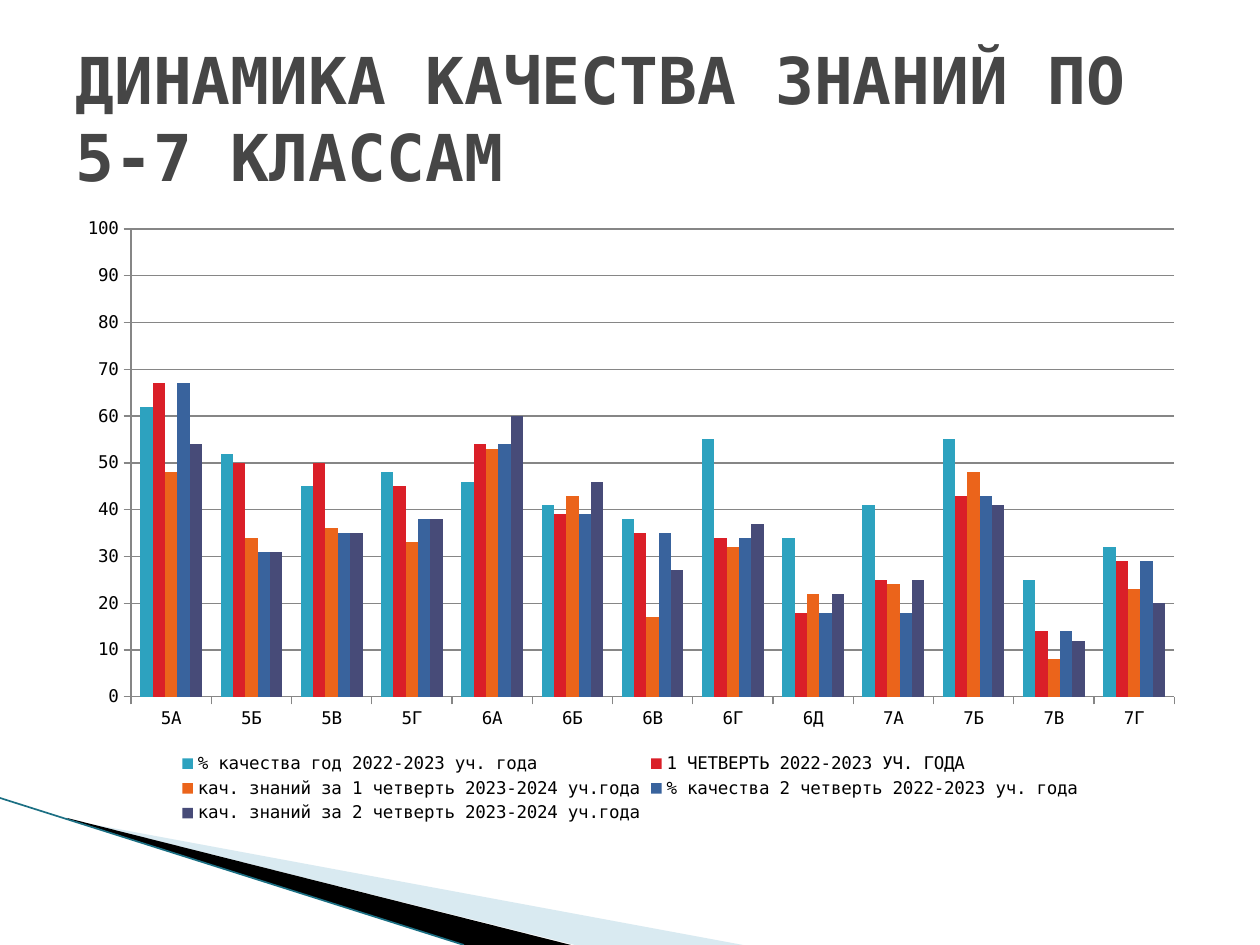
from dataclasses import dataclass

import lxml.etree
import pptx
import pptx.chart.data
import pptx.dml.color
import pptx.enum.chart
import pptx.enum.shapes
import pptx.enum.text
import pptx.oxml
import pptx.oxml.ns
import pptx.util

EMU_PER_PIXEL = 914400 / 126
FONT = "DejaVu Sans Mono"
GREY = "868686"


@dataclass(frozen=True)
class Wedge:
    """A filled polygon of the corner decoration."""
    points: tuple[tuple[int, int], ...]
    color: str
    opacity: int = 100


@dataclass(frozen=True)
class Series:
    """One coloured row of columns."""
    name: str
    color: str
    values: tuple[int, ...]


WEDGES = (
    Wedge(((69, 820), (743, 945), (575, 945), (69, 819)), "A0CBDC", 40),
    Wedge(((67, 818), (571, 945), (464, 945), (68, 819)), "000000"),
)
CLASSES = ("5А", "5Б", "5В", "5Г", "6А", "6Б", "6В", "6Г", "6Д", "7А", "7Б", "7В", "7Г")
SERIES = (
    Series("% качества год 2022-2023 уч. года", "2DA2BF",
           (62, 52, 45, 48, 46, 41, 38, 55, 34, 41, 55, 25, 32)),
    Series("1 ЧЕТВЕРТЬ 2022-2023 УЧ. ГОДА", "DA1F28",
           (67, 50, 50, 45, 54, 39, 35, 34, 18, 25, 43, 14, 29)),
    Series("кач. знаний за 1 четверть 2023-2024 уч.года", "EB641B",
           (48, 34, 36, 33, 53, 43, 17, 32, 22, 24, 48, 8, 23)),
    Series("% качества 2 четверть 2022-2023 уч. года", "39639D",
           (67, 31, 35, 38, 54, 39, 35, 34, 18, 18, 43, 14, 29)),
    Series("кач. знаний за 2 четверть 2023-2024 уч.года", "474B78",
           (54, 31, 35, 38, 60, 46, 27, 37, 22, 25, 41, 12, 20)),
)


def px(length: int) -> int:
    """Turn pixels into EMU."""
    return round(length * EMU_PER_PIXEL)


def rgb(color: str) -> pptx.dml.color.RGBColor:
    """Turn a hex string into a colour."""
    return pptx.dml.color.RGBColor.from_string(color)


def add_wedge(page, wedge: Wedge) -> None:
    """Draw one polygon of the decoration."""
    builder = page.shapes.build_freeform(*wedge.points[0], scale=EMU_PER_PIXEL)
    builder.add_line_segments(wedge.points[1:])
    shape = builder.convert_to_shape()
    shape.shadow.inherit = False
    shape.line.fill.background()
    shape.fill.solid()
    shape.fill.fore_color.rgb = rgb(wedge.color)
    if wedge.opacity < 100:
        color = shape.fill._xPr.find(".//" + pptx.oxml.ns.qn("a:srgbClr"))
        alpha = lxml.etree.SubElement(color, pptx.oxml.ns.qn("a:alpha"))
        alpha.set("val", str(wedge.opacity * 1000))


def add_edge(page) -> None:
    """Draw the thin line along the decoration."""
    edge = page.shapes.add_connector(
        pptx.enum.shapes.MSO_CONNECTOR.STRAIGHT, px(0), px(798), px(464), px(945))
    edge.line.color.rgb = rgb("1B6F83")
    edge.line.width = pptx.util.Pt(0.95)
    lxml.etree.SubElement(edge._element.spPr, pptx.oxml.ns.qn("a:effectLst"))


def add_title(page, text: str) -> None:
    """Write the slide title."""
    box = page.shapes.add_textbox(px(63), px(38), px(1134), px(158))
    frame = box.text_frame
    frame.word_wrap = True
    frame.vertical_anchor = pptx.enum.text.MSO_ANCHOR.MIDDLE
    para = frame.paragraphs[0]
    para.text = text
    para.font.name = FONT
    para.font.size = pptx.util.Pt(36.9)
    para.font.bold = True
    para.font.color.rgb = rgb("464646")


def place_plot(chart, **layout: float) -> None:
    """Fix the inner plot area as fractions of the chart."""
    plot_area = chart._chartSpace.chart.plotArea
    for old in plot_area.findall(pptx.oxml.ns.qn("c:layout")):
        plot_area.remove(old)
    sizes = "".join(f'<c:{key} val="{value}"/>' for key, value in layout.items())
    plot_area.insert(0, pptx.oxml.parse_xml(
        f'<c:layout {pptx.oxml.ns.nsdecls("c")}><c:manualLayout>'
        '<c:layoutTarget val="inner"/><c:xMode val="edge"/><c:yMode val="edge"/>'
        f'{sizes}</c:manualLayout></c:layout>'))


def add_quality_chart(page) -> None:
    """Draw the clustered columns of quality by class."""
    data = pptx.chart.data.CategoryChartData(number_format="General")
    data.categories = CLASSES
    for series in SERIES:
        data.add_series(series.name, series.values)
    chart = page.shapes.add_chart(
        pptx.enum.chart.XL_CHART_TYPE.COLUMN_CLUSTERED,
        px(63), px(204), px(1134), px(624), data).chart
    chart.has_title = False
    chart.font.name = FONT
    chart.font.size = pptx.util.Pt(10)
    chart.font.color.rgb = rgb("000000")
    chart.has_legend = True
    chart.legend.position = pptx.enum.chart.XL_LEGEND_POSITION.BOTTOM
    chart.legend.include_in_layout = False

    plot = chart.plots[0]
    plot.vary_by_categories = False
    plot.gap_width = 150
    plot.overlap = 0
    for drawn, series in zip(plot.series, SERIES):
        drawn.format.fill.solid()
        drawn.format.fill.fore_color.rgb = rgb(series.color)

    scale = chart.value_axis
    scale.minimum_scale, scale.maximum_scale, scale.major_unit = 0, 100, 10
    scale.has_major_gridlines = True
    for axis in (chart.category_axis, scale):
        axis.major_tick_mark = pptx.enum.chart.XL_TICK_MARK.OUTSIDE
    for item in (chart.category_axis, scale, scale.major_gridlines):
        item.format.line.color.rgb = rgb(GREY)
        item.format.line.width = pptx.util.Pt(0.75)
    place_plot(chart, x=0.06, y=0.04, w=0.92, h=0.75)


def main() -> None:
    """Build the slide and save it."""
    deck = pptx.Presentation()
    deck.slide_width, deck.slide_height = px(1260), px(945)
    page = deck.slides.add_slide(deck.slide_layouts[6])
    for wedge in WEDGES:
        add_wedge(page, wedge)
    add_edge(page)
    add_quality_chart(page)
    add_title(page, "ДИНАМИКА КАЧЕСТВА ЗНАНИЙ ПО 5-7 КЛАССАМ")
    deck.save("out.pptx")


if __name__ == "__main__":
    main()
